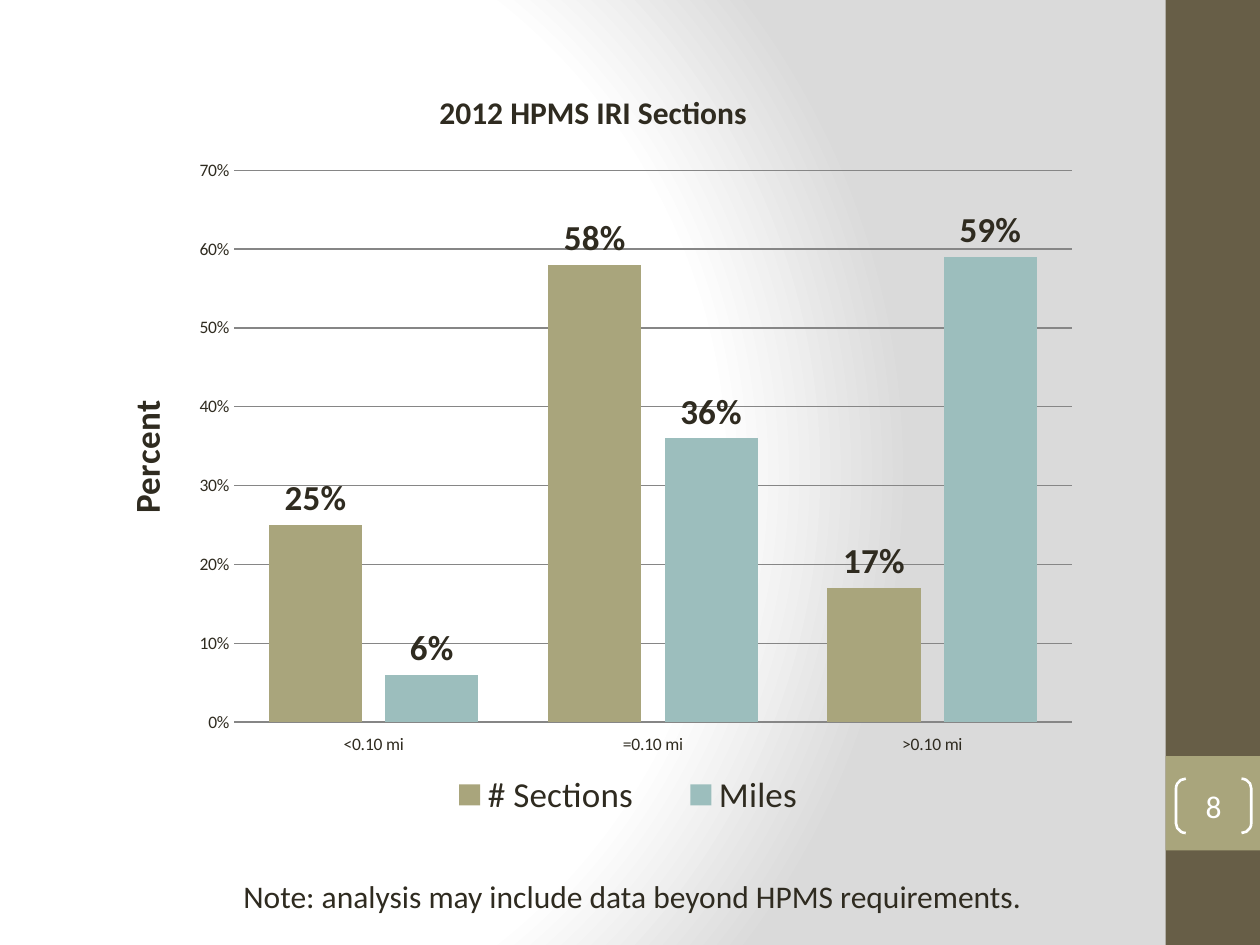
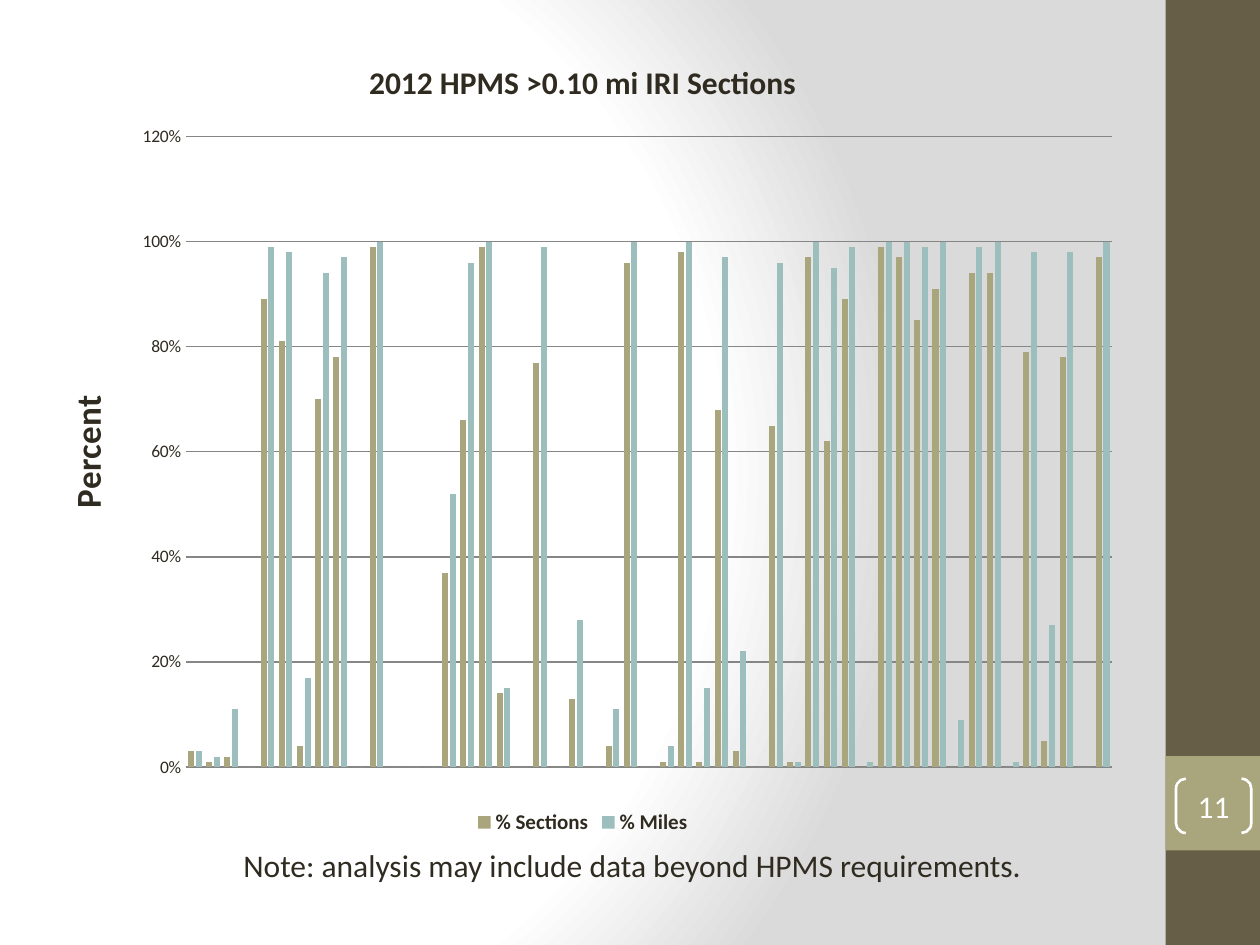
from pptx import Presentation
from pptx.chart.data import CategoryChartData
from pptx.dml.color import RGBColor
from pptx.enum.chart import XL_CHART_TYPE, XL_LABEL_POSITION, XL_LEGEND_POSITION, XL_TICK_LABEL_POSITION, XL_TICK_MARK
from pptx.enum.shapes import MSO_SHAPE
from pptx.enum.text import MSO_ANCHOR, MSO_AUTO_SIZE, PP_ALIGN
from pptx.oxml import parse_xml
from pptx.oxml.ns import nsdecls, qn
from pptx.util import Pt

COLUMNS = XL_CHART_TYPE.COLUMN_CLUSTERED
OUTSIDE_END = XL_LABEL_POSITION.OUTSIDE_END
BOTTOM = XL_LEGEND_POSITION.BOTTOM
NO_LABELS = XL_TICK_LABEL_POSITION.NONE
LOW = XL_TICK_LABEL_POSITION.LOW
NO_TICK = XL_TICK_MARK.NONE
RECT, BRACKETS = MSO_SHAPE.RECTANGLE, MSO_SHAPE.DOUBLE_BRACKET
MIDDLE = MSO_ANCHOR.MIDDLE
GROW = MSO_AUTO_SIZE.SHAPE_TO_FIT_TEXT
LEFT, CENTER = PP_ALIGN.LEFT, PP_ALIGN.CENTER

FONT = "Calibri"
COLORS = {
    "text": "2F2B20",
    "band": "675E47",
    "sections": "A9A57C",
    "miles": "9CBEBD",
    "grid": "868686",
    "white": "FFFFFF",
    "shade": "DADADA",
}
NOTE = "Note: analysis may include data beyond HPMS requirements."

SECTIONS = [
    0.03, 0.01, 0.02, 0, 0.89, 0.81, 0.04, 0.7, 0.78, 0, 0.99, 0, 0, 0, 0.37, 0.66, 0.99,
    0.14, 0, 0.77, 0, 0.13, 0, 0.04, 0.96, 0, 0.01, 0.98, 0.01, 0.68, 0.03, 0, 0.65, 0.01,
    0.97, 0.62, 0.89, 0, 0.99, 0.97, 0.85, 0.91, 0, 0.94, 0.94, 0, 0.79, 0.05, 0.78, 0, 0.97,
]
MILES = [
    0.03, 0.02, 0.11, 0, 0.99, 0.98, 0.17, 0.94, 0.97, 0, 1, 0, 0, 0, 0.52, 0.96, 1,
    0.15, 0, 0.99, 0, 0.28, 0, 0.11, 1, 0, 0.04, 1, 0.15, 0.97, 0.22, 0, 0.96, 0.01,
    1, 0.95, 0.99, 0.01, 1, 1, 0.99, 1, 0.09, 0.99, 1, 0.01, 0.98, 0.27, 0.98, 0, 1,
]


def rgb(name):
    return RGBColor.from_string(COLORS[name])


def style_font(font, size, color="text", bold=False):
    font.name, font.size, font.bold = FONT, Pt(size), bold
    font.color.rgb = rgb(color)


def write(tf, text, size=18, color="text", bold=False, align=LEFT):
    p = tf.paragraphs[0]
    p.alignment = align
    r = p.add_run()
    r.text = text
    style_font(r.font, size, color, bold)


def add_shape(slide, kind, box, fill=None, line=None):
    sp = slide.shapes.add_shape(kind, *map(Pt, box))
    sp.shadow.inherit = False
    if fill:
        sp.fill.solid()
        sp.fill.fore_color.rgb = rgb(fill)
    else:
        sp.fill.background()
    if line:
        sp.line.color.rgb = rgb(line)
        sp.line.width = Pt(1.5)
    else:
        sp.line.fill.background()
    return sp


def set_background(slide):
    slide.background.fill.gradient()
    grad = slide.element.find(".//" + qn("a:gradFill"))
    stops = "".join(
        f'<a:gs pos="{pos}000"><a:srgbClr val="{COLORS[color]}"/></a:gs>'
        for pos, color in ((0, "white"), (75, "white"), (100, "shade"))
    )
    grad.getparent().replace(grad, parse_xml(
        f'<a:gradFill {nsdecls("a")} rotWithShape="1"><a:gsLst>{stops}</a:gsLst>'
        '<a:path path="circle"><a:fillToRect l="20000" t="50000" r="100000" b="50000"/>'
        '</a:path></a:gradFill>'
    ))


def add_side_band(slide, number):
    add_shape(slide, RECT, (666, 0, 54, 540), "band")
    add_shape(slide, RECT, (666, 432, 54, 54), "sections")
    sp = add_shape(slide, BRACKETS, (672, 445, 43, 31), line="white")
    sp.adjustments[0] = 0.18
    tf = sp.text_frame
    tf.margin_left = tf.margin_top = tf.margin_right = tf.margin_bottom = 0
    tf.vertical_anchor = MIDDLE
    write(tf, str(number), color="white", align=CENTER)


def add_note(slide, top, width):
    tf = slide.shapes.add_textbox(Pt(132), Pt(top), Pt(width), Pt(29)).text_frame
    tf.word_wrap = True
    tf.auto_size = GROW
    write(tf, NOTE)


def set_layout(parent, after, box, inner=False):
    for old in parent.findall(qn("c:layout")):
        parent.remove(old)
    target = '<c:layoutTarget val="inner"/>' if inner else ""
    modes = '<c:xMode val="edge"/><c:yMode val="edge"/>'
    sizes = "".join(f'<c:{k} val="{v}"/>' for k, v in zip("xywh", box))
    layout = parse_xml(
        f'<c:layout {nsdecls("c")}><c:manualLayout>{target}{modes}{sizes}'
        '</c:manualLayout></c:layout>'
    )
    if after is None:
        parent.insert(0, layout)
    else:
        after.addnext(layout)


def style_line(line):
    line.color.rgb = rgb("grid")
    line.width = Pt(0.75)


def style_axes(chart, maximum, step, show_categories):
    cat, val = chart.category_axis, chart.value_axis
    for axis in (cat, val):
        axis.major_tick_mark = axis.minor_tick_mark = NO_TICK
    cat.tick_label_position = LOW if show_categories else NO_LABELS
    cat.has_major_gridlines = False
    style_line(cat.format.line)
    val.minimum_scale, val.maximum_scale, val.major_unit = 0, maximum, step
    val.has_major_gridlines = True
    style_line(val.major_gridlines.format.line)
    val.format.line.fill.background()
    val.tick_labels.number_format = "0%"
    val.tick_labels.number_format_is_linked = False
    write(val.axis_title.text_frame, "Percent", size=20, bold=True, align=CENTER)


def add_column_chart(slide, box, title, categories, series, plot_box, maximum, step,
                     legend_size, legend_bold=False, legend_box=None, detailed=False):
    data = CategoryChartData(number_format="0%")
    data.categories = categories
    for name, values in series:
        data.add_series(name, values)
    chart = slide.shapes.add_chart(COLUMNS, *map(Pt, box), data).chart
    style_font(chart.font, 10)
    chart.has_title = True
    write(chart.chart_title.text_frame, title, bold=True, align=CENTER)
    style_axes(chart, maximum, step, detailed)

    plot = chart.plots[0]
    plot.gap_width, plot.overlap, plot.vary_by_categories = 75, -25, False
    for s, color in zip(plot.series, ("sections", "miles")):
        s.format.fill.solid()
        s.format.fill.fore_color.rgb = rgb(color)
        if detailed:
            labels = s.data_labels
            labels.show_value = True
            labels.number_format = "0%"
            labels.number_format_is_linked = False
            labels.position = OUTSIDE_END
            style_font(labels.font, 20, bold=True)

    chart.has_legend = True
    legend = chart.legend
    legend.position = BOTTOM
    legend.include_in_layout = False
    style_font(legend.font, legend_size, bold=legend_bold)
    root = chart.element
    set_layout(root.find(".//" + qn("c:plotArea")), None, plot_box, inner=True)
    if legend_box:
        node = root.find(".//" + qn("c:legend"))
        set_layout(node, node.find(qn("c:legendPos")), legend_box)


def add_base_slide(prs, number):
    slide = prs.slides.add_slide(prs.slide_layouts[6])
    set_background(slide)
    add_side_band(slide, number)
    return slide


def main():
    prs = Presentation()
    prs.slide_width, prs.slide_height = Pt(720), Pt(540)

    slide = add_base_slide(prs, 8)
    add_column_chart(
        slide, (54, 36, 570, 438), "2012 HPMS IRI Sections",
        ["<0.10 mi", "=0.10 mi", ">0.10 mi"],
        [("# Sections", [0.25, 0.58, 0.17]), ("Miles", [0.06, 0.36, 0.59])],
        plot_box=(0.14, 0.14, 0.84, 0.72), maximum=0.7, step=0.1,
        legend_size=20, legend_box=(0.32, 0.92, 0.43, 0.07), detailed=True,
    )
    add_note(slide, 497.5, 516)

    slide = add_base_slide(prs, 11)
    add_column_chart(
        slide, (18, 18, 630, 462), "2012 HPMS >0.10 mi IRI Sections",
        [str(n) for n in range(1, len(SECTIONS) + 1)],
        [("% Sections", SECTIONS), ("% Miles", MILES)],
        plot_box=(0.14, 0.13, 0.84, 0.78), maximum=1.2, step=0.2,
        legend_size=12, legend_bold=True,
    )
    add_note(slide, 480, 510)

    prs.save("out.pptx")


if __name__ == "__main__":
    main()
